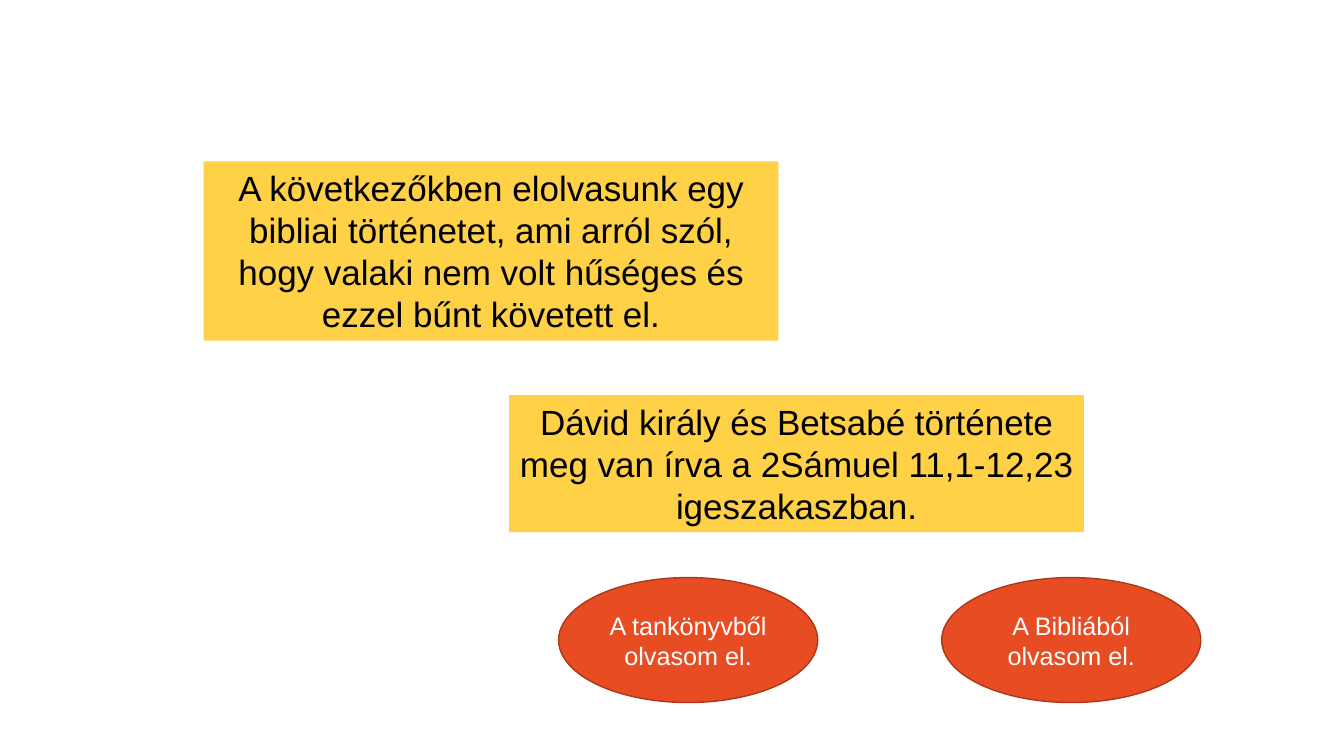
from pptx import Presentation
from pptx.dml.color import RGBColor
from pptx.enum.shapes import MSO_SHAPE as Shape
from pptx.enum.text import MSO_ANCHOR as Anchor, PP_ALIGN as Align
from pptx.util import Inches, Pt

YELLOW = RGBColor(0xFF, 0xD1, 0x47)
ORANGE = RGBColor(0xE8, 0x4C, 0x22)
RUST = RGBColor(0xAC, 0x38, 0x19)
BLACK = RGBColor(0, 0, 0)
WHITE = RGBColor(0xFF, 0xFF, 0xFF)

STATEMENTS = [
    ("A következőkben elolvasunk egy bibliai történetet, ami arról szól, "
     "hogy valaki nem volt hűséges és ezzel bűnt követett el.", 2.02, 1.6, 1.78),
    ("Dávid király és Betsabé története meg van írva a 2Sámuel 11,1-12,23 "
     "igeszakaszban.", 5.05, 3.92, 1.36),
]
CHOICES = ["A tankönyvből olvasom el.", "A Bibliából olvasom el."]

STATEMENT_WIDTH = 5.7
CHOICE_LEFT, CHOICE_TOP, CHOICE_STEP = 5.54, 5.73, 3.8
CHOICE_WIDTH, CHOICE_HEIGHT = 2.57, 1.24

STATEMENT_STYLE = {"kind": Shape.RECTANGLE, "fill": YELLOW, "line": None,
                   "anchor": Anchor.TOP, "size": 25, "color": BLACK}
CHOICE_STYLE = {"kind": Shape.OVAL, "fill": ORANGE, "line": RUST,
                "anchor": Anchor.MIDDLE, "size": 18, "color": WHITE}


def add_panel(slide, text, box, style):
    panel = slide.shapes.add_shape(style["kind"], *map(Inches, box))
    panel.shadow.inherit = False
    panel.fill.solid()
    panel.fill.fore_color.rgb = style["fill"]
    if style["line"] is None:
        panel.line.fill.background()
    else:
        panel.line.color.rgb = style["line"]
        panel.line.width = Pt(1)
    frame = panel.text_frame
    frame.word_wrap = True
    frame.vertical_anchor = style["anchor"]
    paragraph = frame.paragraphs[0]
    paragraph.alignment = Align.CENTER
    wording = paragraph.add_run()
    wording.text = text
    for name, value in {"name": "Arial", "size": Pt(style["size"])}.items():
        setattr(wording.font, name, value)
    wording.font.color.rgb = style["color"]


def main():
    deck = Presentation()
    deck.slide_width, deck.slide_height = Inches(13.33), Inches(7.5)
    slide = deck.slides.add_slide(deck.slide_layouts[6])

    for text, left, top, height in STATEMENTS:
        add_panel(slide, text, (left, top, STATEMENT_WIDTH, height), STATEMENT_STYLE)
    for index, text in enumerate(CHOICES):
        left = CHOICE_LEFT + index * CHOICE_STEP
        add_panel(slide, text, (left, CHOICE_TOP, CHOICE_WIDTH, CHOICE_HEIGHT), CHOICE_STYLE)

    deck.save("out.pptx")


if __name__ == "__main__":
    main()
